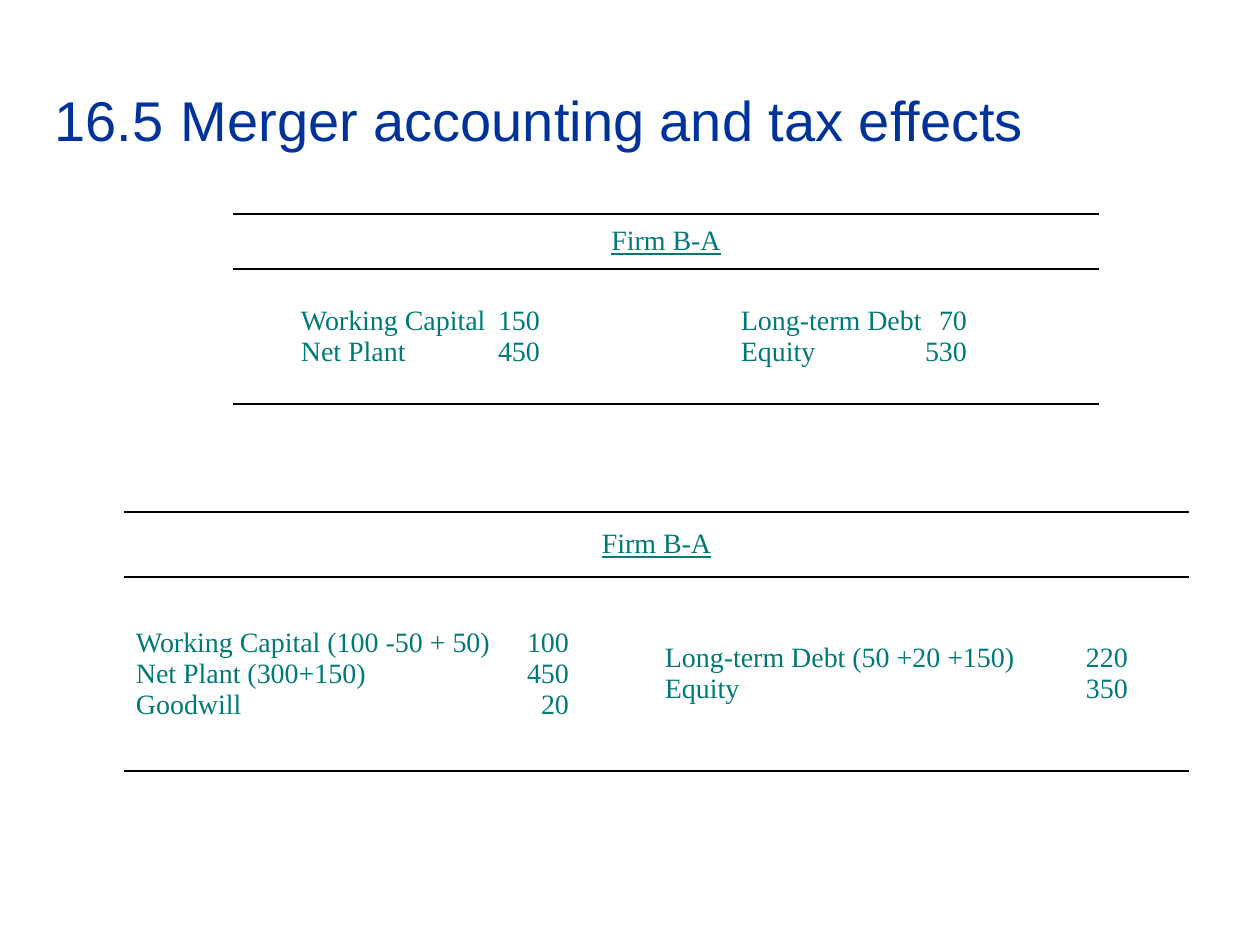
from dataclasses import dataclass

from lxml import etree
from pptx import Presentation
from pptx.dml.color import RGBColor
from pptx.enum.text import MSO_ANCHOR, PP_ALIGN
from pptx.oxml.ns import qn
from pptx.util import Inches, Pt

MIDDLE = MSO_ANCHOR.MIDDLE
LEFT, CENTER = PP_ALIGN.LEFT, PP_ALIGN.CENTER
PX = Inches(1) / 126


@dataclass
class Theme:
    title_color: str = "003399"
    body_color: str = "007A77"
    rule_color: str = "000000"
    title_font: str = "Arial"
    body_font: str = "Times New Roman"
    title_size: int = 32
    body_size: int = 16


theme = Theme()


def style_paragraph(p, font, size, color, align, tab=None, tab_align="l"):
    p.alignment = align
    if tab:
        tabs = etree.SubElement(p._p.get_or_add_pPr(), qn("a:tabLst"))
        etree.SubElement(tabs, qn("a:tab"), pos=str(round(tab * PX)), algn=tab_align)
    for r in p.runs:
        r.font.name = font
        r.font.size = Pt(size)
        r.font.bold = False
        r.font.color.rgb = RGBColor.from_string(color)


def rule_cell(cell):
    """Rules above and below the cell, none at its sides."""
    cell.fill.background()
    tcPr = cell._tc.get_or_add_tcPr()
    for i, side in enumerate(("lnL", "lnR", "lnT", "lnB")):
        ln = etree.Element(qn(f"a:{side}"), w=str(Pt(1)))
        if side in ("lnT", "lnB"):
            fill = etree.SubElement(ln, qn("a:solidFill"))
            etree.SubElement(fill, qn("a:srgbClr"), val=theme.rule_color)
        else:
            etree.SubElement(ln, qn("a:noFill"))
        tcPr.insert(i, ln)


prs = Presentation()
prs.slide_width, prs.slide_height = round(1260 * PX), round(945 * PX)
s = prs.slides.add_slide(prs.slide_layouts[5])

# Title
title = s.shapes.title
title.left, title.top, title.width, title.height = (
    round(v * PX) for v in (42, 84, 1176, 70))
tf = title.text_frame
tf.text = "16.5\tMerger accounting and tax effects"
tf.vertical_anchor = MIDDLE
style_paragraph(tf.paragraphs[0], theme.title_font, theme.title_size,
                theme.title_color, LEFT, tab=126)

# Balance sheets: each side has its inset, its amount tab and its lines
sheets = [
    dict(left=124, top=512, cols=(529, 536), rows=(65, 194),
         sides=[(12, 433, ["Working Capital (100 -50 + 50)\t100",
                           "Net Plant (300+150)\t450",
                           "Goodwill\t20"]),
                (12, 463, ["Long-term Debt (50 +20 +150)\t220",
                           "Equity\t350"])]),
    dict(left=233, top=214, cols=(374, 492), rows=(55, 135),
         sides=[(68, 239, ["Working Capital\t150", "Net Plant\t450"]),
                (134, 226, ["Long-term Debt\t70", "Equity\t530"])]),
]

for sheet in sheets:
    table = s.shapes.add_table(
        2, 2, round(sheet["left"] * PX), round(sheet["top"] * PX),
        round(sum(sheet["cols"]) * PX), round(sum(sheet["rows"]) * PX)).table
    table.first_row = table.horz_banding = False
    for col, width in zip(table.columns, sheet["cols"]):
        col.width = round(width * PX)
    for row, height in zip(table.rows, sheet["rows"]):
        row.height = round(height * PX)
    for cell in table.iter_cells():
        cell.vertical_anchor = MIDDLE
        rule_cell(cell)

    # Heading across both sides
    heading = table.cell(0, 0)
    heading.merge(table.cell(0, 1))
    heading.text_frame.text = "Firm B-A"
    p = heading.text_frame.paragraphs[0]
    style_paragraph(p, theme.body_font, theme.body_size, theme.body_color, CENTER)
    p.runs[0].font.underline = True

    # Assets on the left, claims on the right
    for c, (inset, tab, lines) in enumerate(sheet["sides"]):
        cell = table.cell(1, c)
        cell.margin_left = round(inset * PX)
        cell.text_frame.text = "\n".join(lines)
        for p in cell.text_frame.paragraphs:
            style_paragraph(p, theme.body_font, theme.body_size,
                            theme.body_color, LEFT, tab, "r")

prs.save("out.pptx")
